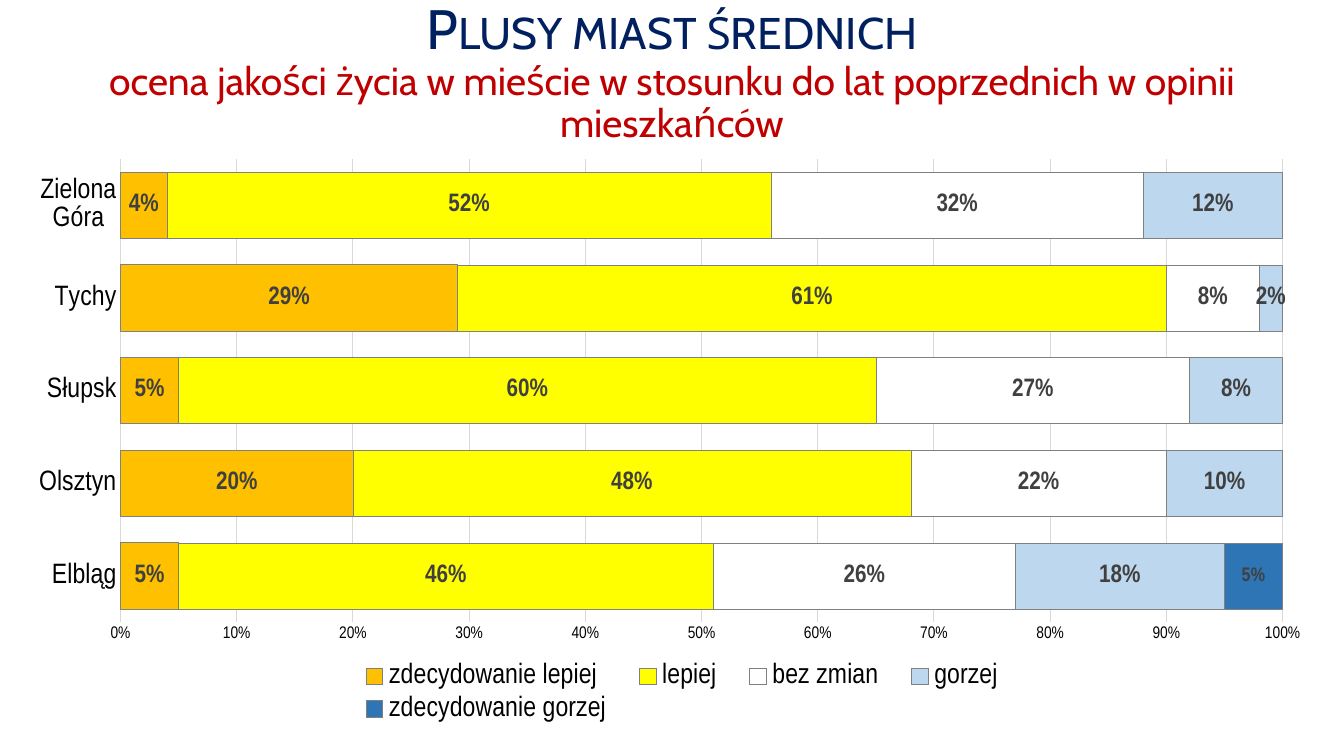
from lxml.etree import SubElement
from pptx import Presentation
from pptx.chart.data import CategoryChartData
from pptx.dml.color import RGBColor
from pptx.enum.chart import XL_CHART_TYPE, XL_LEGEND_POSITION, XL_TICK_MARK
from pptx.enum.text import MSO_ANCHOR, PP_ALIGN
from pptx.oxml.ns import qn
from pptx.util import Inches, Pt

COLORS = {
    "navy": "002060", "red": "C00000", "black": "000000", "label": "404040",
    "grid": "D9D9D9", "outline": "808080", "amber": "FFC000",
    "yellow": "FFFF00", "white": "FFFFFF", "pale": "BDD7EE", "blue": "2E75B6",
}
CITIES = ["Elbląg", "Olsztyn", "Słupsk", "Tychy", "Zielona Góra"]
RATINGS = [
    ("zdecydowanie lepiej", "amber", 0.5, (0.05, 0.2, 0.05, 0.29, 0.04)),
    ("lepiej", "yellow", 0.25, (0.46, 0.48, 0.6, 0.61, 0.52)),
    ("bez zmian", "white", 0.25, (0.26, 0.22, 0.27, 0.08, 0.32)),
    ("gorzej", "pale", 0.25, (0.18, 0.1, 0.08, 0.02, 0.12)),
    ("zdecydowanie gorzej", "blue", 0.25, (0.05, 0, 0, 0, 0)),
]
TITLE_BOX = (0, 0.01, 13.33, 1.45)
CHART_BOX = (0.16, 1.46, 12.95, 5.82)


def color(name):
    return RGBColor.from_string(COLORS[name])


def set_font(font, color_name, **values):
    for key, value in values.items():
        setattr(font, key, value)
    font.color.rgb = color(color_name)


def set_line(line, color_name, width):
    line.color.rgb = color(color_name)
    line.width = Pt(width)


def set_layout(parent, position, inner, **fractions):
    """Fix a chart part at fractions of the chart's box."""
    for old in parent.findall(qn("c:layout")):
        parent.remove(old)
    layout = SubElement(parent, qn("c:layout"))
    parent.insert(position, layout)
    manual = SubElement(layout, qn("c:manualLayout"))
    if inner:
        SubElement(manual, qn("c:layoutTarget")).set("val", "inner")
    for key in ("xMode", "yMode"):
        SubElement(manual, qn(f"c:{key}")).set("val", "edge")
    for key, value in fractions.items():
        SubElement(manual, qn(f"c:{key}")).set("val", str(value))


def add_title(slide, box):
    frame = slide.shapes.add_textbox(*map(Inches, box)).text_frame
    frame.word_wrap = True
    frame.vertical_anchor = MSO_ANCHOR.MIDDLE
    para = frame.paragraphs[0]
    para.alignment = PP_ALIGN.CENTER
    para.line_spacing = 0.9
    heading = para.add_run()
    heading.text = "Plusy miast średnich"
    set_font(heading.font, "navy", name="Cabin", size=Pt(39.6))
    heading.font._element.set("cap", "small")
    para.add_line_break()
    subtitle = para.add_run()
    subtitle.text = ("ocena jakości życia w mieście w stosunku do lat "
                     "poprzednich w opinii mieszkańców")
    set_font(subtitle.font, "red", name="Cabin", size=Pt(27.9))


def format_axes(chart):
    for axis, size in ((chart.category_axis, 20), (chart.value_axis, 12)):
        axis.major_tick_mark = axis.minor_tick_mark = XL_TICK_MARK.NONE
        set_font(axis.tick_labels.font, "black", name="Arial Narrow", size=Pt(size))
    set_line(chart.category_axis.format.line, "grid", 0.75)
    scale = chart.value_axis
    scale.minimum_scale, scale.maximum_scale, scale.major_unit = 0, 1, 0.1
    scale.format.line.fill.background()
    scale.has_major_gridlines = True
    set_line(scale.major_gridlines.format.line, "grid", 0.75)
    scale.tick_labels.number_format = "0%"
    scale.tick_labels.number_format_is_linked = False


def format_series(series, fill_name, line_width):
    series.format.fill.solid()
    series.format.fill.fore_color.rgb = color(fill_name)
    set_line(series.format.line, "outline", line_width)
    series.invert_if_negative = False
    if all(series.values):
        labels = series.data_labels
        labels.show_value = True
        labels.number_format = "0%"
        labels.number_format_is_linked = False
        set_font(labels.font, "label", name="Arial Narrow", size=Pt(18), bold=True)
        return
    for index, value in enumerate(series.values):
        if value:
            set_font(series.points[index].data_label.font, "label",
                     name="Arial Narrow", size=Pt(14), bold=True)


def add_ratings_chart(slide, box):
    data = CategoryChartData(number_format="0%")
    data.categories = CITIES
    for name, _, _, values in RATINGS:
        data.add_series(name, values)
    chart = slide.shapes.add_chart(
        XL_CHART_TYPE.BAR_STACKED_100, *map(Inches, box), data).chart
    set_font(chart.font, "black", name="Calibri", size=Pt(10))
    chart.has_title = False
    plot = chart.plots[0]
    plot.gap_width, plot.overlap, plot.vary_by_categories = 40, 100, False
    for series, (_, fill_name, line_width, _) in zip(plot.series, RATINGS):
        format_series(series, fill_name, line_width)
    format_axes(chart)
    chart.has_legend = True
    legend = chart.legend
    legend.position = XL_LEGEND_POSITION.BOTTOM
    legend.include_in_layout = False
    set_font(legend.font, "black", name="Arial Narrow", size=Pt(20))
    set_layout(chart._chartSpace.chart.plotArea, 0, True,
               x=0.08, y=0.02, w=0.89, h=0.79)
    set_layout(legend._element, 1, False, x=0.25, y=0.87, w=0.52, h=0.12)


def main():
    deck = Presentation()
    deck.slide_width, deck.slide_height = Inches(13.33), Inches(7.5)
    slide = deck.slides.add_slide(deck.slide_layouts[6])
    add_title(slide, TITLE_BOX)
    add_ratings_chart(slide, CHART_BOX)
    deck.save("out.pptx")


if __name__ == "__main__":
    main()
